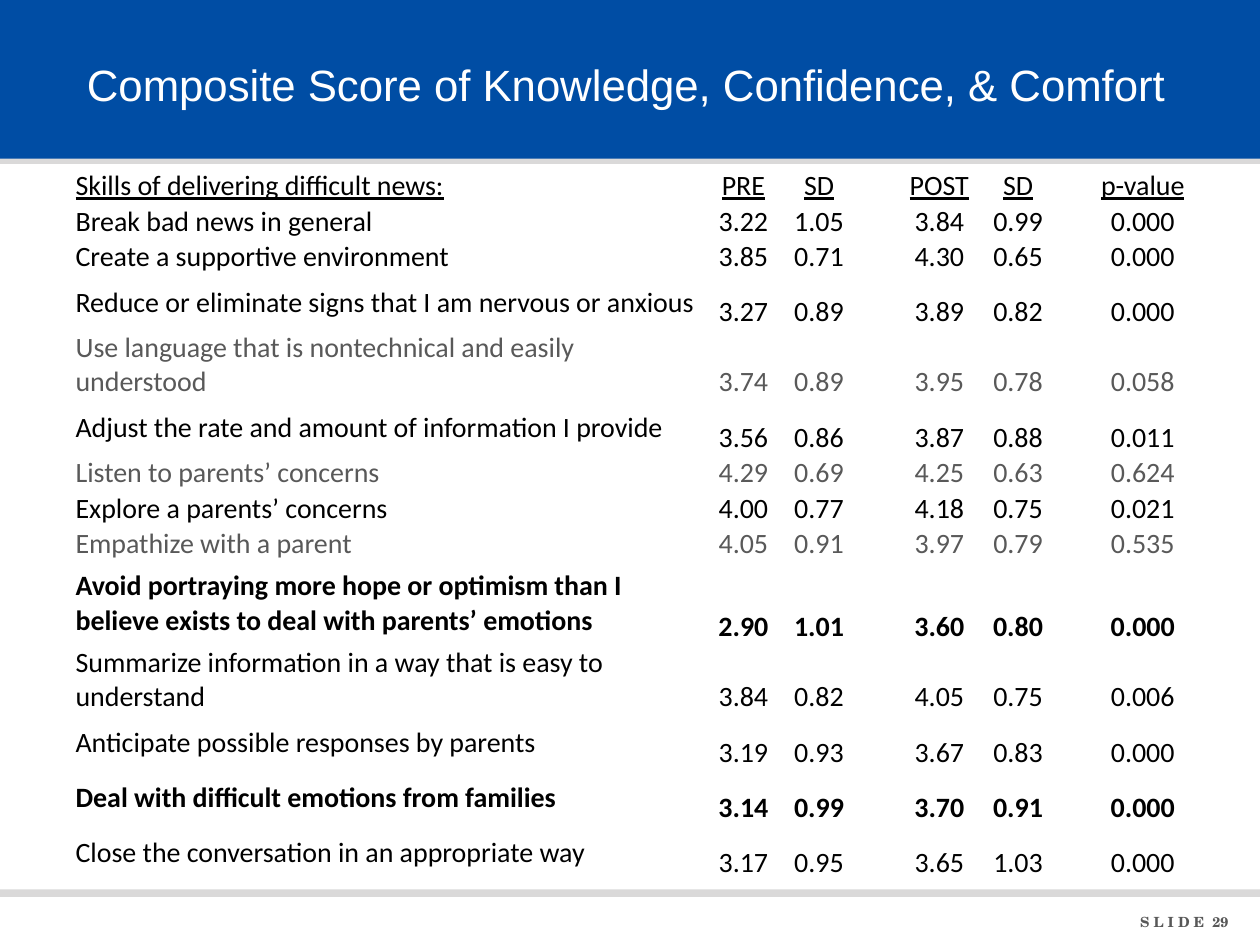
from dataclasses import dataclass

from pptx import Presentation
from pptx.dml.color import RGBColor as RGB
from pptx.enum.shapes import MSO_SHAPE as Shape
from pptx.enum.text import MSO_ANCHOR as Anchor, MSO_AUTO_SIZE as Fit, PP_ALIGN as Align
from pptx.util import Inches, Pt


@dataclass(frozen=True)
class Theme:
    blue: str = "004DA4"
    rule: str = "DAD9D9"
    white: str = "FFFFFF"
    ink: str = "000000"
    muted: str = "595959"
    foot: str = "585858"
    head_font: str = "Arial"
    body_font: str = "Calibri"
    foot_font: str = "TeX Gyre Schola"
    head_size: int = 25
    body_size: int = 16
    foot_size: int = 8


COLS = [4.96, 0.7, 0.5, 0.33, 0.75, 0.5, 0.33, 0.82]
LINE = 0.22
HEAD = ("Skills of delivering difficult news:", "PRE SD POST SD p-value", 1, "head")
SKILLS = [
    ("Break bad news in general", "3.22 1.05 3.84 0.99 0.000", 1, ""),
    ("Create a supportive environment", "3.85 0.71 4.30 0.65 0.000", 1, ""),
    ("Reduce or eliminate signs that I am nervous or anxious",
     "3.27 0.89 3.89 0.82 0.000", 2, ""),
    ("Use language that is nontechnical and easily understood",
     "3.74 0.89 3.95 0.78 0.058", 2, "muted"),
    ("Adjust the rate and amount of information I provide",
     "3.56 0.86 3.87 0.88 0.011", 2, ""),
    ("Listen to parents’ concerns", "4.29 0.69 4.25 0.63 0.624", 1, "muted"),
    ("Explore a parents’ concerns", "4.00 0.77 4.18 0.75 0.021", 1, ""),
    ("Empathize with a parent", "4.05 0.91 3.97 0.79 0.535", 1, "muted"),
    ("Avoid portraying more hope or optimism than I believe exists to deal with "
     "parents’ emotions", "2.90 1.01 3.60 0.80 0.000", 3, "bold"),
    ("Summarize information in a way that is easy to understand",
     "3.84 0.82 4.05 0.75 0.006", 2, ""),
    ("Anticipate possible responses by parents", "3.19 0.93 3.67 0.83 0.000", 2, ""),
    ("Deal with difficult emotions from families", "3.14 0.99 3.70 0.91 0.000", 2, "bold"),
    ("Close the conversation in an appropriate way", "3.17 0.95 3.65 1.03 0.000", 2, ""),
]


class Deck:
    """Draw styled elements on the current slide."""

    def __init__(self, theme):
        self.theme = theme
        self.prs = Presentation()
        self.prs.slide_width, self.prs.slide_height = Inches(10), Inches(7.5)
        self.slide = self.prs.slides.add_slide(self.prs.slide_layouts[5])

    def style(self, para, face, size, color, bold=False, line=False):
        for run in para.runs:
            font = run.font
            font.name, font.size, font.bold = face, Pt(size), bold
            font.underline = line
            font.color.rgb = RGB.from_string(color)

    def bar(self, top, high, color):
        bar = self.slide.shapes.add_shape(
            Shape.RECTANGLE, 0, Inches(top), self.prs.slide_width, Inches(high))
        bar.shadow.inherit = False
        bar.fill.solid()
        bar.fill.fore_color.rgb = RGB.from_string(color)
        bar.line.fill.background()

    def title(self, text, *area):
        look, head = self.theme, self.slide.shapes.title
        head.left, head.top, head.width, head.height = map(Inches, area)
        self.slide.shapes._spTree.append(head._element)
        frame = head.text_frame
        frame.text = text
        frame.word_wrap, frame.auto_size = True, Fit.NONE
        frame.vertical_anchor = Anchor.MIDDLE
        para = frame.paragraphs[0]
        para.alignment = Align.LEFT
        self.style(para, look.head_font, look.head_size, look.white)

    def footer(self, text, *area):
        look = self.theme
        frame = self.slide.shapes.add_textbox(*map(Inches, area)).text_frame
        frame.text = text
        frame.word_wrap = True
        para = frame.paragraphs[0]
        para.alignment = Align.RIGHT
        self.style(para, look.foot_font, look.foot_size, look.foot, bold=True)

    def cell(self, cell, text, first, kind):
        look = self.theme
        cell.fill.background()
        cell.margin_left = cell.margin_right = cell.margin_top = Inches(0.01)
        cell.margin_bottom = 0
        middle = first and kind != "head"
        cell.vertical_anchor = Anchor.MIDDLE if middle else Anchor.BOTTOM
        cell.text_frame.text = text
        para = cell.text_frame.paragraphs[0]
        para.alignment = Align.LEFT if first else Align.CENTER
        para._p.get_or_add_endParaRPr().set("sz", str(look.body_size * 100))
        color = look.muted if kind == "muted" else look.ink
        self.style(para, look.body_font, look.body_size, color,
                   kind == "bold", kind == "head")

    def table(self, data, left, top):
        high = LINE * sum(lines for _, _, lines, _ in data)
        grid = self.slide.shapes.add_table(
            len(data), len(COLS), Inches(left), Inches(top),
            Inches(sum(COLS)), Inches(high)).table
        grid.first_row = grid.horz_banding = False
        for col, wide in zip(grid.columns, COLS):
            col.width = Inches(wide)
        for row, (skill, stats, lines, kind) in zip(grid.rows, data):
            row.height = Inches(LINE * lines)
            pre, pre_sd, post, post_sd, prob = stats.split()
            texts = [skill, pre, pre_sd, "", post, post_sd, "", prob]
            for spot, (cell, text) in enumerate(zip(row.cells, texts)):
                self.cell(cell, text, spot == 0, kind)


def main():
    look = Theme()
    deck = Deck(look)
    deck.bar(1.05, 0.25, look.rule)
    deck.bar(-0.01, 1.27, look.blue)
    deck.footer("S L I D E  29", 8.43, 7.2, 1.42, 0.23)
    deck.bar(7.06, 0.06, look.rule)
    deck.title("Composite Score of Knowledge, Confidence, & Comfort", 0.59, 0.17, 8.9, 1)
    deck.table([HEAD, *SKILLS], 0.59, 1.33)
    deck.prs.save("out.pptx")


if __name__ == "__main__":
    main()
